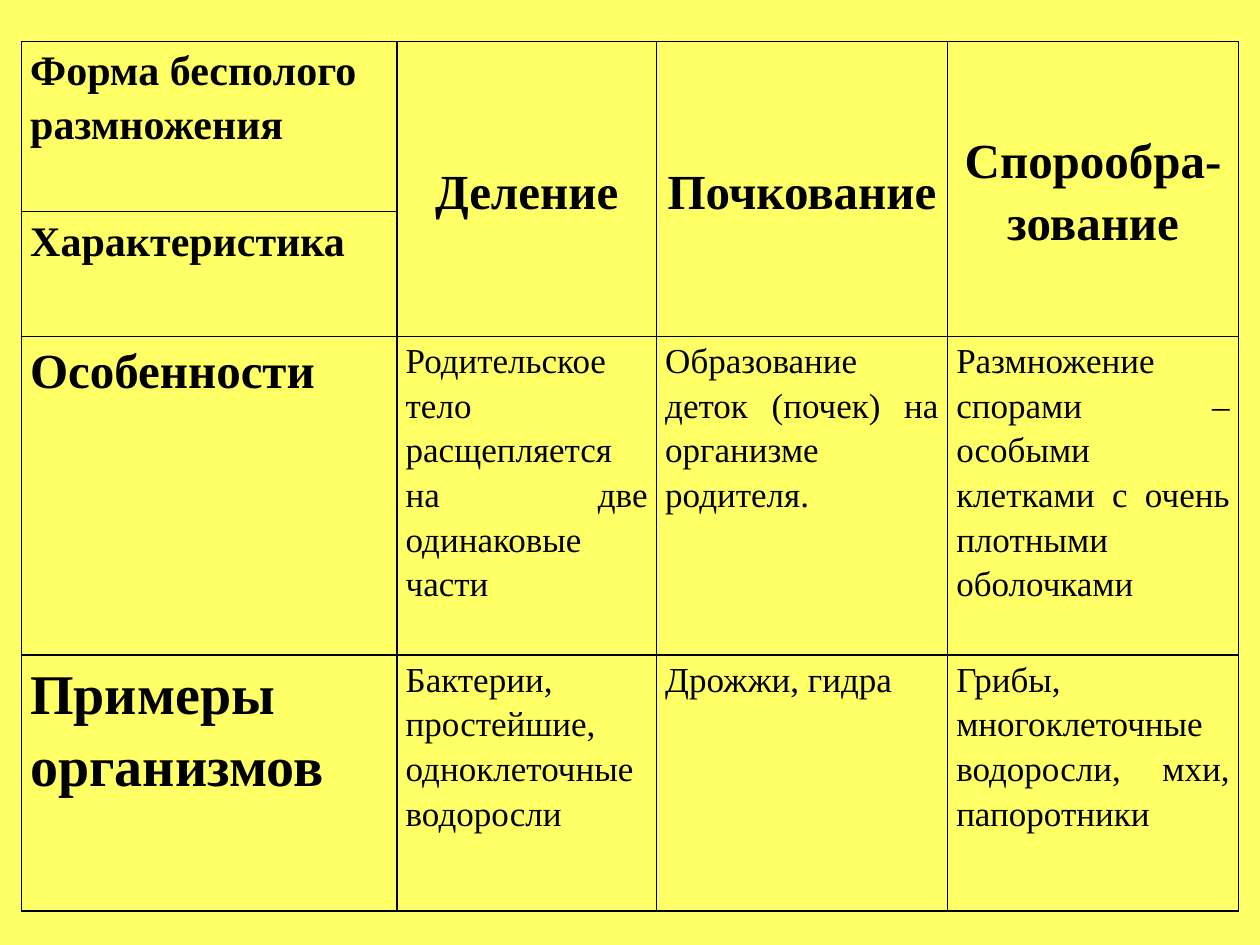
from lxml.etree import SubElement
from pptx import Presentation
from pptx.dml.color import RGBColor
from pptx.enum.text import MSO_ANCHOR as Anchor, PP_ALIGN as Align
from pptx.oxml.ns import qn
from pptx.util import Inches, Pt

COLORS = {"background": "FFFF66", "ink": "000000"}
FONT = "Times New Roman"
COLUMNS = [2.98, 2.06, 2.31, 2.31]
ROWS = [1.35, 0.99, 2.53, 2.03]

# Wording by row; None marks a cell covered by the heading above it
TEXTS = [
    ["Форма бесполого размножения", "Деление", "Почкование", "Спорообра-зование"],
    ["Характеристика", None, None, None],
    ["Особенности",
     "Родительское тело расщепляется на две одинаковые части",
     "Образование деток (почек) на организме родителя.",
     "Размножение спорами – особыми клетками с очень плотными оболочками"],
    ["Примеры организмов",
     "Бактерии, простейшие, одноклеточные водоросли",
     "Дрожжи, гидра",
     "Грибы, многоклеточные водоросли, мхи, папоротники"],
]
LABEL_SIZES = [24, 24, 28, 32]
HEADING_SIZE, BODY_SIZE = 28, 20


def add_borders(cell, width=1):
    properties = cell._tc.get_or_add_tcPr()
    for side in ("lnL", "lnR", "lnT", "lnB"):
        line = SubElement(properties, qn(f"a:{side}"), w=str(Pt(width)))
        fill = SubElement(line, qn("a:solidFill"))
        SubElement(fill, qn("a:srgbClr"), val=COLORS["ink"])


def write_cell(cell, text, size, bold, align):
    paragraph = cell.text_frame.paragraphs[0]
    paragraph.alignment = align
    paragraph.line_spacing = 1.15
    run = paragraph.add_run()
    run.text = text
    run.font.name = FONT
    run.font.size = Pt(size)
    run.font.bold = bold
    run.font.color.rgb = RGBColor.from_string(COLORS["ink"])


def cell_style(row, column):
    """Size, weight and alignment for a place in the grid."""
    if column == 0:
        return LABEL_SIZES[row], True, Align.LEFT if row == 0 else Align.JUSTIFY
    if row == 0:
        return HEADING_SIZE, True, Align.CENTER
    return BODY_SIZE, False, Align.JUSTIFY


def add_reproduction_table(slide, left, top):
    frame = slide.shapes.add_table(
        len(ROWS), len(COLUMNS), Inches(left), Inches(top),
        Inches(sum(COLUMNS)), Inches(sum(ROWS)))
    table = frame.table
    table.first_row = table.horz_banding = False
    for column, width in zip(table.columns, COLUMNS):
        column.width = Inches(width)
    for row, height in zip(table.rows, ROWS):
        row.height = Inches(height)

    # Cell borders, margins and wording
    for row, texts in enumerate(TEXTS):
        for column, text in enumerate(texts):
            cell = table.cell(row, column)
            add_borders(cell)
            cell.fill.background()
            cell.margin_left = cell.margin_right = Inches(0.07)
            cell.margin_top = cell.margin_bottom = 0
            if text:
                write_cell(cell, text, *cell_style(row, column))

    # Headings span the two top rows
    for column in range(1, len(COLUMNS)):
        heading = table.cell(0, column)
        heading.merge(table.cell(1, column))
        heading.vertical_anchor = Anchor.MIDDLE


def main():
    presentation = Presentation()
    presentation.slide_width, presentation.slide_height = Inches(10), Inches(7.5)
    slide = presentation.slides.add_slide(presentation.slide_layouts[6])
    background = slide.background.fill
    background.solid()
    background.fore_color.rgb = RGBColor.from_string(COLORS["background"])
    add_reproduction_table(slide, left=0.17, top=0.33)
    presentation.save("out.pptx")


if __name__ == "__main__":
    main()
